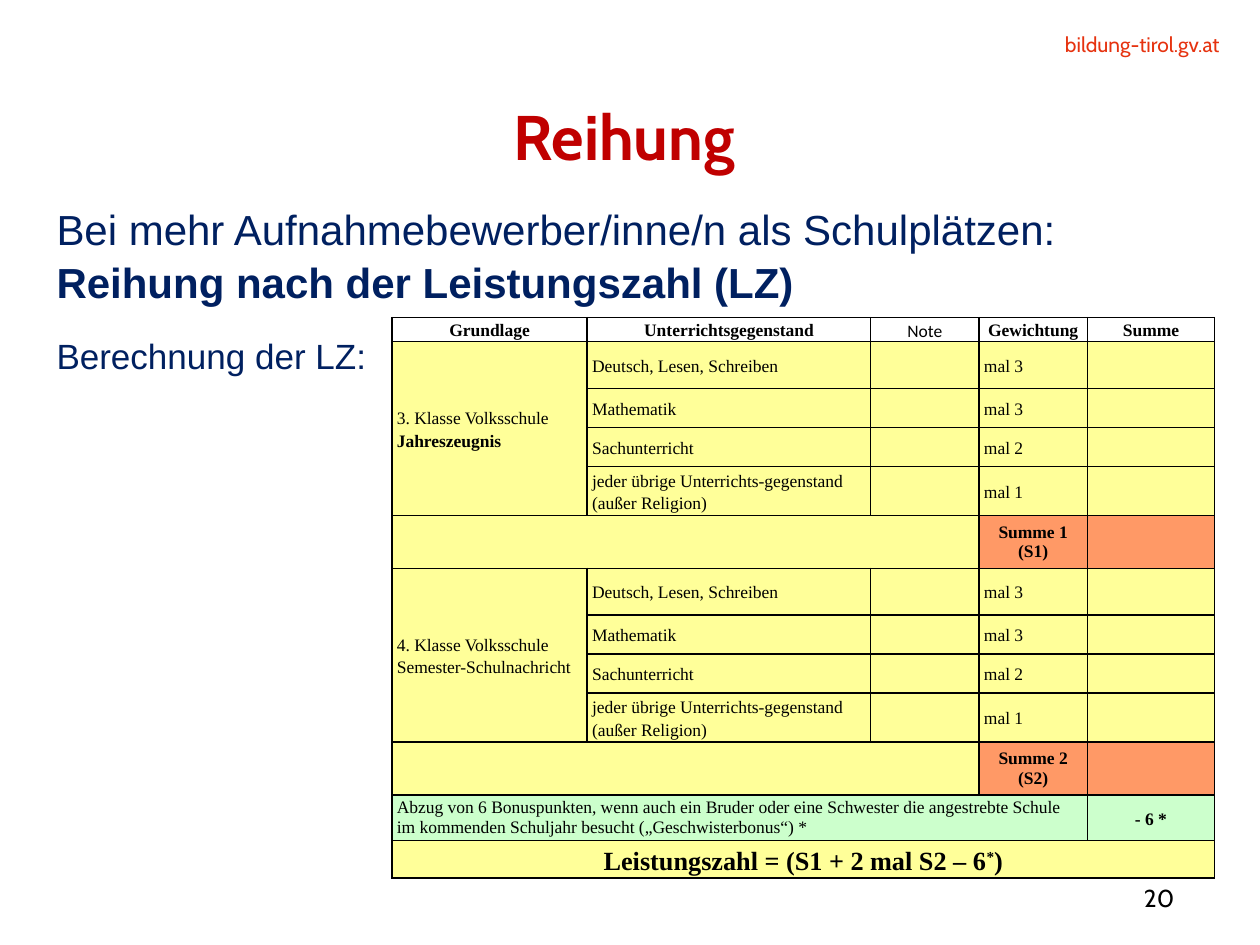
from lxml import etree
from pptx import Presentation
from pptx.dml.color import RGBColor
from pptx.enum.text import MSO_ANCHOR as Anchor, PP_ALIGN as Align
from pptx.oxml.ns import qn
from pptx.util import Inches, Pt

HUES = {"red": "C00000", "link": "E6320F", "navy": "002060", "black": "000000",
        "white": "FFFFFF", "yellow": "FFFF99", "orange": "FF9966", "green": "CCFFCC"}
SERIF = "Times New Roman"

HEADS = ["Grundlage", "Unterrichtsgegenstand", "Note", "Gewichtung", "Summe"]
GRADES = [("Deutsch, Lesen, Schreiben", "mal 3"), ("Mathematik", "mal 3"),
          ("Sachunterricht", "mal 2"),
          ("jeder übrige Unterrichts-gegenstand (außer Religion)", "mal 1")]
BLOCKS = [
    ([[("3. Klasse Volksschule ", False), ("Jahreszeugnis", True)]], "Summe 1", "(S1)"),
    ([[("4. Klasse Volksschule", False)], [("Semester-Schulnachricht", False)]],
     "Summe 2", "(S2)"),
]
BONUS = ("Abzug von 6 Bonuspunkten, wenn auch ein Bruder oder eine Schwester die angestrebte "
         "Schule im kommenden Schuljahr besucht („Geschwisterbonus“) *")
RESULT = [("Leistungszahl = (S1 + 2 mal S2 – 6", True), ("*", True), (")", True)]
COLS = [1.55, 2.25, 0.86, 0.86, 1.01]
ROWS = [0.19] + [0.37, 0.31, 0.31, 0.39, 0.42] * 2 + [0.36, 0.3]


def style(run, size, face, hue, bold=False):
    font = run.font
    font.size, font.name, font.bold = Pt(size), face, bold
    font.color.rgb = RGBColor.from_string(HUES[hue])


def write(frame, paras, size, face, hue, align=Align.LEFT, gap=None):
    for i, parts in enumerate(paras):
        para = frame.add_paragraph() if i else frame.paragraphs[0]
        para.alignment = align
        if gap:
            para.line_spacing = gap
        for text, bold in parts:
            run = para.add_run()
            run.text = text
            style(run, size, face, hue, bold)


def bare(frame, anchor=Anchor.TOP):
    frame.margin_left = frame.margin_right = frame.margin_top = frame.margin_bottom = 0
    frame.vertical_anchor = anchor
    frame.word_wrap = True


def box(slide, *at):
    frame = slide.shapes.add_textbox(*map(Inches, at)).text_frame
    frame.word_wrap = True
    return frame


def border(cell):
    props = cell._tc.get_or_add_tcPr()
    for side in ("lnL", "lnR", "lnT", "lnB"):
        line = etree.SubElement(props, qn("a:" + side), w=str(Pt(1)))
        fill = etree.SubElement(line, qn("a:solidFill"))
        etree.SubElement(fill, qn("a:srgbClr"), val=HUES["black"])


def put(cell, paras, size=10, face=SERIF, align=Align.LEFT, gap=1.15):
    write(cell.text_frame, paras, size, face, "black", align, gap)


def paint(cell, hue):
    cell.fill.solid()
    cell.fill.fore_color.rgb = RGBColor.from_string(HUES[hue])


def fill_table(table):
    table.first_row = table.horz_banding = False
    for col, width in zip(table.columns, COLS):
        col.width = Inches(width)
    for row, height in zip(table.rows, ROWS):
        row.height = Inches(height)
    for r in range(len(ROWS)):
        for c in range(len(COLS)):
            cell = table.cell(r, c)
            cell.margin_left = cell.margin_right = Inches(0.04)
            cell.margin_top = cell.margin_bottom = 0
            cell.vertical_anchor = Anchor.MIDDLE
            border(cell)
            paint(cell, "yellow" if r else "white")

    for c, text in enumerate(HEADS):
        note = text == "Note"
        put(table.cell(0, c), [[(text, not note)]], face="Calibri" if note else SERIF,
            align=Align.CENTER)

    for b, (name, total, code) in enumerate(BLOCKS):
        top = 1 + b * (len(GRADES) + 1)
        end = top + len(GRADES)
        table.cell(top, 0).merge(table.cell(end - 1, 0))
        put(table.cell(top, 0), name)
        for r, (topic, factor) in enumerate(GRADES, top):
            put(table.cell(r, 1), [[(topic, False)]])
            put(table.cell(r, 3), [[(factor, False)]])
        table.cell(end, 0).merge(table.cell(end, 2))
        put(table.cell(end, 3), [[(total, True)], [(code, True)]], align=Align.CENTER, gap=None)
        for c in (3, 4):
            paint(table.cell(end, c), "orange")

    last = len(ROWS) - 1
    table.cell(last - 1, 0).merge(table.cell(last - 1, 3))
    put(table.cell(last - 1, 0), [[(BONUS, False)]], gap=None)
    put(table.cell(last - 1, 4), [[("- 6 *", True)]], align=Align.CENTER)
    for c in (0, 4):
        paint(table.cell(last - 1, c), "green")
    table.cell(last, 0).merge(table.cell(last, 4))
    put(table.cell(last, 0), [RESULT], size=15, align=Align.CENTER)
    star = table.cell(last, 0).text_frame.paragraphs[0].runs[1]
    star._r.get_or_add_rPr().set("baseline", "30000")


def main():
    deck = Presentation()
    deck.slide_width, deck.slide_height = Inches(10), Inches(7.5)
    slide = deck.slides.add_slide(deck.slide_layouts[5])

    title = slide.shapes.title
    title.left, title.top, title.width, title.height = map(Inches, (0.59, 0.96, 8.73, 0.48))
    bare(title.text_frame)
    write(title.text_frame, [[("Reihung", True)]], 36, "Cabin", "red", Align.CENTER, Pt(30))

    site = box(slide, 7.27, 0.25, 2.41, 0.2)
    bare(site)
    write(site, [[("bildung-tirol.gv.at", False)]], 12, "Cabin", "link", Align.RIGHT)

    page = box(slide, 8.27, 6.98, 1.05, 0.29)
    bare(page, Anchor.MIDDLE)
    write(page, [[("20", False)]], 14, "Cabin", "black", Align.RIGHT)

    body = box(slide, 0.35, 1.55, 9.21, 1.72)
    write(body, [[("Bei mehr Aufnahmebewerber/inne/n als Schulplätzen: ", False),
                  ("Reihung nach der Leistungszahl (LZ)", True)],
                 [("Berechnung der LZ:", False)]], 24, "Arial", "navy", gap=Pt(30))
    calc = body.paragraphs[1]
    calc.line_spacing = Pt(40)
    calc.runs[0].font.size = Pt(20)

    spot = map(Inches, (3.11, 2.52, sum(COLS), sum(ROWS)))
    fill_table(slide.shapes.add_table(len(ROWS), len(COLS), *spot).table)
    deck.save("out.pptx")


if __name__ == "__main__":
    main()
